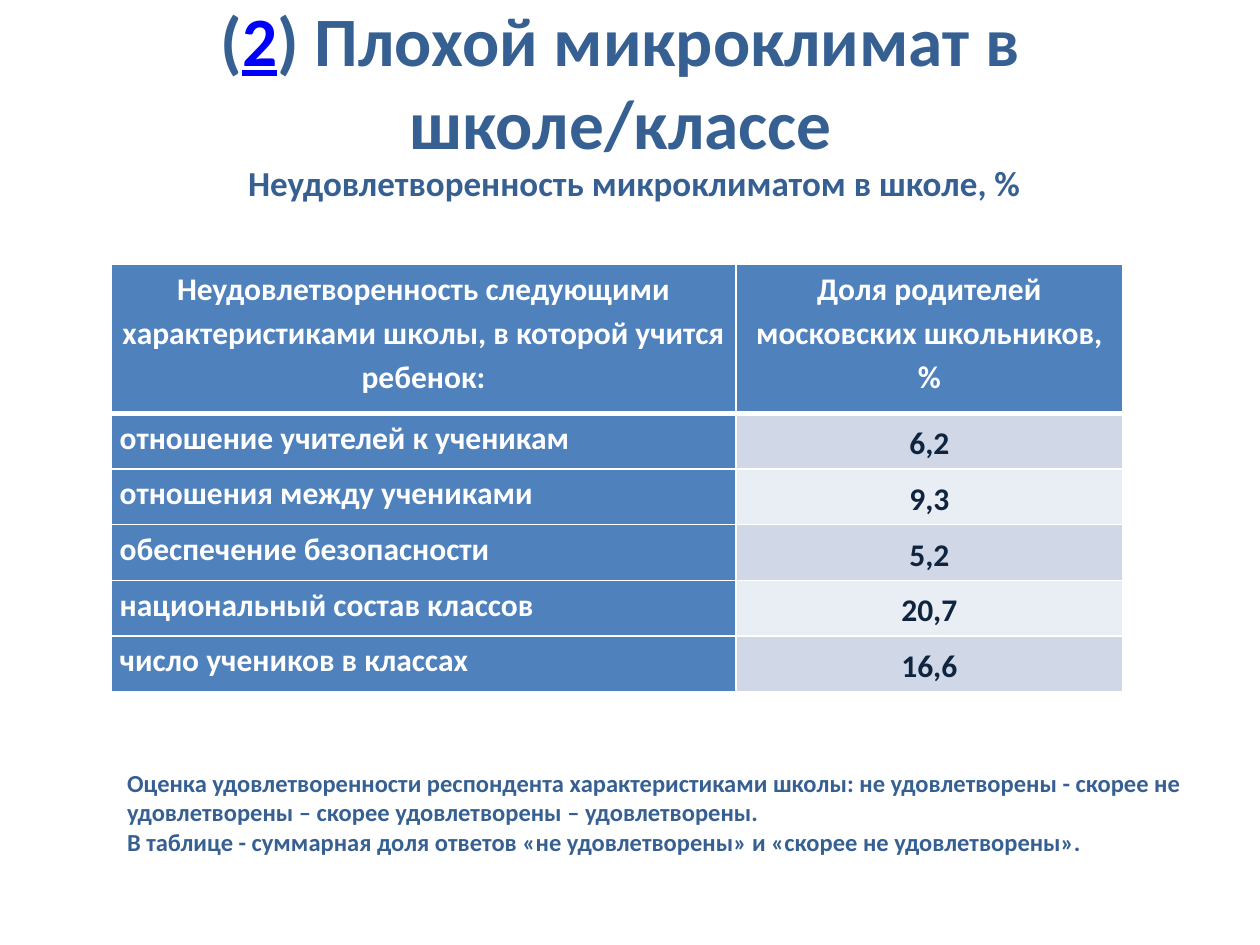
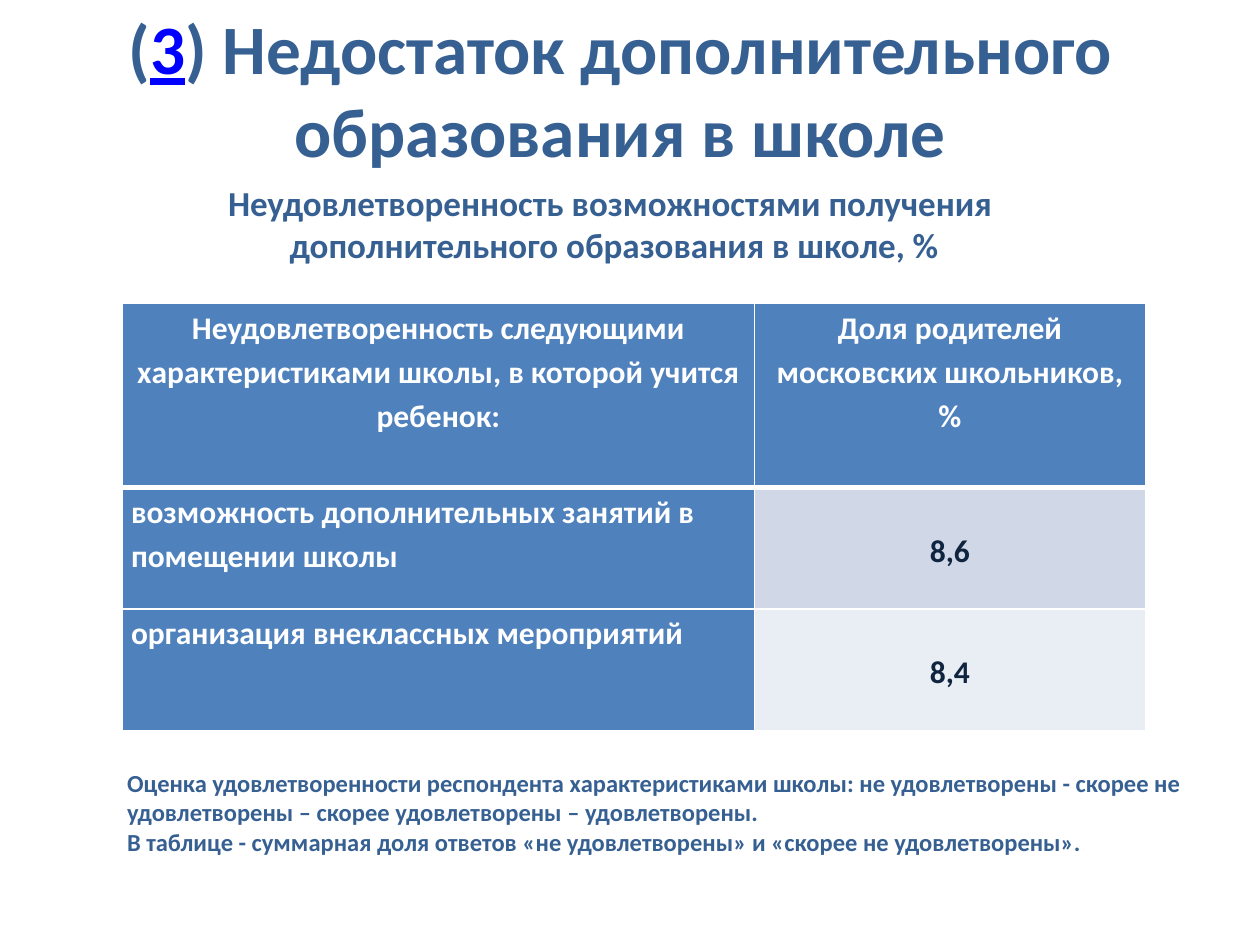
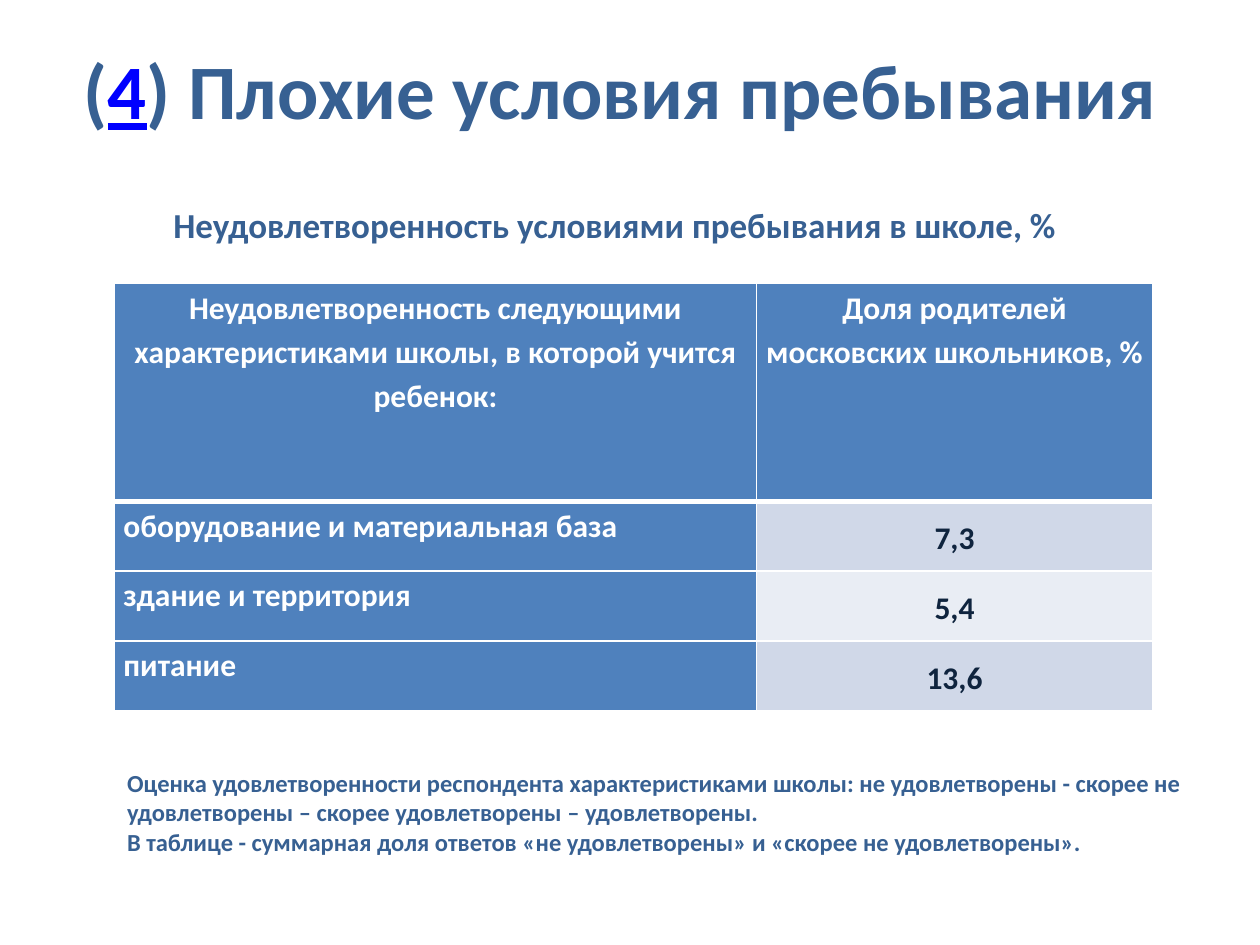
from dataclasses import dataclass

from lxml.etree import SubElement
from pptx import Presentation
from pptx.dml.color import RGBColor as RGB
from pptx.enum.text import MSO_ANCHOR as Anchor, MSO_AUTO_SIZE as AutoSize, PP_ALIGN as Align
from pptx.oxml.ns import qn
from pptx.util import Inches, Pt


@dataclass(frozen=True)
class Theme:
    font: str = "Calibri"
    heading: str = "376092"
    link: str = "0000FF"
    header: str = "4F81BD"
    bands: tuple = ("D0D8E8", "E9EDF4")
    value: str = "0F243E"
    white: str = "FFFFFF"
    title_size: float = 39.6
    large_title_size: float = 44
    subtitle_size: float = 20
    table_size: float = 18
    note_size: float = 14
    border: float = 1
    header_border: float = 3


theme = Theme()

TABLE_HEADER = (
    "Неудовлетворенность следующими характеристиками школы, в которой учится ребенок:",
    "Доля родителей московских школьников, %",
)
NOTE = (
    "Оценка удовлетворенности респондента характеристиками школы: не удовлетворены - "
    "скорее не удовлетворены – скорее удовлетворены – удовлетворены.",
    "В таблице - суммарная доля ответов «не удовлетворены» и «скорее не удовлетворены».",
)
NOTE_AREA = (0.91, 6.04, 8.58, 0.81)
TABLE_HEIGHT = 3.39
FIRST_COLUMN_SHARE = 0.618

topics = [
    dict(
        number="2", title="Плохой микроклимат в школе/классе",
        title_height=1.25, title_size=theme.title_size,
        subtitle=["Неудовлетворенность микроклиматом в школе, %"],
        subtitle_area=(1.85, 1.23, 6.37, 0.44),
        table_place=(0.88, 2.1, 8.03), header_height=1.18,
        rows=[
            ("отношение учителей к ученикам", "6,2"),
            ("отношения между учениками", "9,3"),
            ("обеспечение безопасности", "5,2"),
            ("национальный состав классов", "20,7"),
            ("число учеников в классах", "16,6"),
        ],
    ),
    dict(
        number="3", title="Недостаток дополнительного образования в школе",
        title_height=1.38, title_size=theme.title_size,
        subtitle=["Неудовлетворенность возможностями получения ",
                  "дополнительного образования в школе, %"],
        subtitle_area=(1.69, 1.39, 6.37, 0.77),
        table_place=(0.97, 2.41, 8.12), header_height=1.46,
        rows=[
            ("возможность дополнительных занятий в помещении школы", "8,6"),
            ("организация внеклассных мероприятий", "8,4"),
        ],
    ),
    dict(
        number="4", title="Плохие условия пребывания",
        title_height=1.38, title_size=theme.large_title_size,
        subtitle=["Неудовлетворенность условиями пребывания в школе, %"],
        subtitle_area=(1.25, 1.56, 7.26, 0.44),
        table_place=(0.91, 2.25, 8.24), header_height=1.73,
        rows=[
            ("оборудование и материальная база", "7,3"),
            ("здание и территория", "5,4"),
            ("питание", "13,6"),
        ],
    ),
]


def write(frame, paragraphs, size, color=theme.heading, align=Align.LEFT, spacing=None):
    """Fill a text frame; each paragraph is a list of run texts."""
    for index, texts in enumerate(paragraphs):
        para = frame.add_paragraph() if index else frame.paragraphs[0]
        para.alignment = align
        para.line_spacing = spacing
        for text in texts:
            span = para.add_run()
            span.text = text
            span.font.name = theme.font
            span.font.size = Pt(size)
            span.font.bold = True
            span.font.color.rgb = RGB.from_string(color)


def add_box(page, area, wrap=True, grow=True):
    """Add a text box centred vertically and return its text frame."""
    frame = page.shapes.add_textbox(*map(Inches, area)).text_frame
    frame.word_wrap = wrap
    frame.vertical_anchor = Anchor.MIDDLE
    frame.auto_size = AutoSize.SHAPE_TO_FIT_TEXT if grow else AutoSize.NONE
    return frame


deck = Presentation()
deck.slide_width, deck.slide_height = Inches(10), Inches(7.5)
blank = deck.slide_layouts[6]

for topic in topics:
    page = deck.slides.add_slide(blank)

    title = add_box(page, (0.12, 0.01, 9.61, topic["title_height"]), grow=False)
    write(title, [["(", topic["number"], f") {topic['title']}"]],
          size=topic["title_size"], align=Align.CENTER)
    number = title.paragraphs[0].runs[1].font
    number.color.rgb = RGB.from_string(theme.link)
    number.underline = True

    subtitle = add_box(page, topic["subtitle_area"], wrap=False)
    write(subtitle, [[line] for line in topic["subtitle"]],
          size=theme.subtitle_size, align=Align.CENTER)

    note = add_box(page, NOTE_AREA)
    write(note, [[line] for line in NOTE], size=theme.note_size)

    left, top, width = topic["table_place"]
    rows = [TABLE_HEADER, *topic["rows"]]
    table = page.shapes.add_table(len(rows), 2, Inches(left), Inches(top),
                                  Inches(width), Inches(TABLE_HEIGHT)).table
    table.columns[0].width = Inches(width * FIRST_COLUMN_SHARE)
    table.columns[1].width = Inches(width * (1 - FIRST_COLUMN_SHARE))
    body_height = (TABLE_HEIGHT - topic["header_height"]) / len(topic["rows"])

    for row, texts in enumerate(rows):
        table.rows[row].height = Inches(body_height if row else topic["header_height"])
        for column, text in enumerate(texts):
            cell = table.cell(row, column)
            is_value = row > 0 and column == 1
            cell.margin_left = cell.margin_right = Inches(0.07)
            cell.margin_top = cell.margin_bottom = 0
            cell.vertical_anchor = Anchor.MIDDLE if is_value else Anchor.TOP
            write(cell.text_frame, [[text]], size=theme.table_size,
                  color=theme.value if is_value else theme.white,
                  align=Align.LEFT if row and column == 0 else Align.CENTER,
                  spacing=1.15)

            properties = cell._tc.get_or_add_tcPr()
            for side in "LRTB":
                under_header = (row, side) in ((0, "B"), (1, "T"))
                weight = theme.header_border if under_header else theme.border
                line = SubElement(properties, qn(f"a:ln{side}"), w=str(Pt(weight)))
                line_fill = SubElement(line, qn("a:solidFill"))
                SubElement(line_fill, qn("a:srgbClr"), val=theme.white)
            cell.fill.solid()
            cell.fill.fore_color.rgb = RGB.from_string(
                theme.bands[(row - 1) % 2] if is_value else theme.header)

deck.save("out.pptx")
